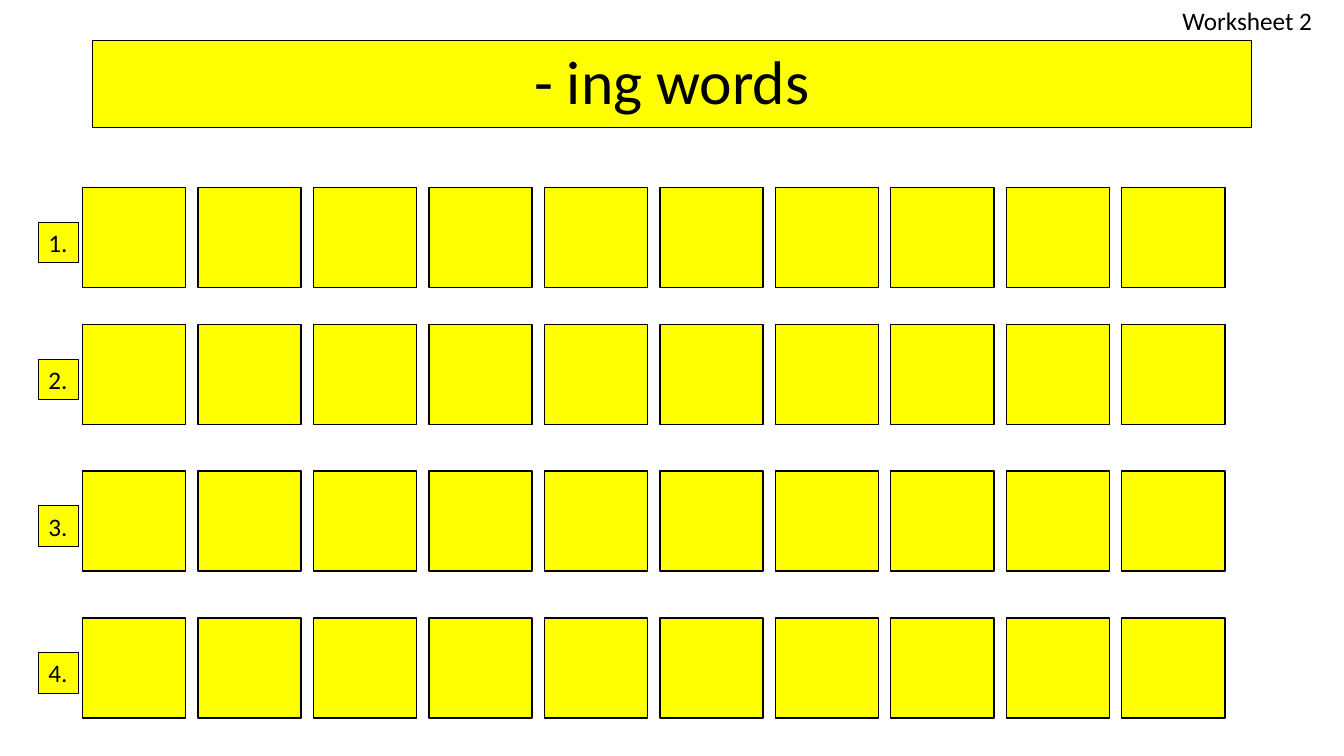
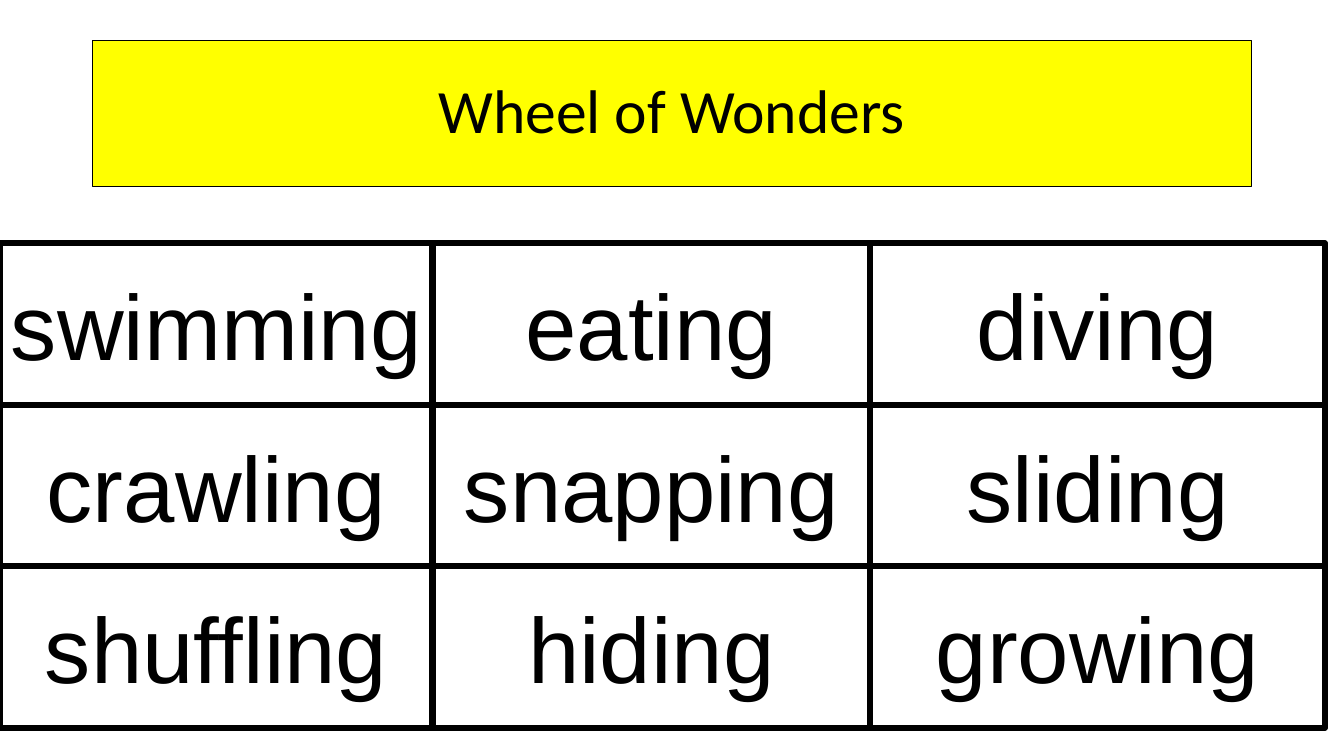
import itertools

import pptx
import pptx.dml.color
import pptx.enum.shapes
import pptx.enum.text
import pptx.util

Cm = pptx.util.Cm
Pt = pptx.util.Pt
ALIGN = pptx.enum.text.PP_ALIGN
ANCHOR = pptx.enum.text.MSO_ANCHOR

COLOURS = {"ink": "000000", "highlight": "FFFF00", "paper": "FFFFFF"}

# Text formats: attributes of the frame, the paragraph and the font
TITLE = {
    "frame": {"vertical_anchor": ANCHOR.MIDDLE, "word_wrap": True},
    "para": {"alignment": ALIGN.CENTER, "line_spacing": 0.9},
    "font": {"name": "Calibri", "size": Pt(44)},
}
LABEL = {
    "frame": {"vertical_anchor": ANCHOR.TOP, "word_wrap": False},
    "para": {"alignment": ALIGN.LEFT},
    "font": {"name": "Calibri", "size": Pt(18)},
}
WORD = {
    "frame": {"vertical_anchor": ANCHOR.MIDDLE, "word_wrap": False},
    "para": {"alignment": ALIGN.CENTER},
    "font": {"name": "Arial", "size": Pt(66)},
}

# Letter boxes on the worksheet, in cm
ROW_TOPS = [4.72, 8.18, 11.87, 15.57]
LETTERS_PER_ROW = 10
LETTERS_LEFT, LETTER_PITCH = 2.08, 2.91
LETTER_WIDTH, LETTER_HEIGHT = 2.6, 2.52

# Word grid, in cm
WORDS = [
    ["swimming", "eating", "diving"],
    ["crawling", "snapping", "sliding"],
    ["shuffling", "hiding", "growing"],
]
COLUMN_WIDTHS = [10.9, 11.03, 11.46]
GRID_TOP, GRID_ROW_HEIGHT = 6.13, 4.07


def colour(name):
    return pptx.dml.color.RGBColor.from_string(COLOURS[name])


def apply(target, values):
    for attribute, value in values.items():
        setattr(target, attribute, value)


def write(box, text, style):
    frame = box.text_frame
    apply(frame, style["frame"])
    para = frame.paragraphs[0]
    apply(para, style["para"])
    span = para.add_run()
    span.text = text
    apply(span.font, style["font"])
    span.font.color.rgb = colour("ink")


def add_box(page, place, fill="highlight", line=0.75, text=None, style=None):
    box = page.shapes.add_shape(
        pptx.enum.shapes.MSO_SHAPE.RECTANGLE, *map(Cm, place))
    box.shadow.inherit = False
    box.fill.solid()
    box.fill.fore_color.rgb = colour(fill)
    box.line.color.rgb = colour("ink")
    box.line.width = Pt(line)
    if text:
        write(box, text, style)


def add_page(deck, title, title_height):
    page = deck.slides.add_slide(deck.slide_layouts[6])
    add_box(page, (2.33, 1.02, 29.21, title_height), text=title, style=TITLE)
    return page


def add_letter_row(page, number, top):
    for column in range(LETTERS_PER_ROW):
        left = LETTERS_LEFT + column * LETTER_PITCH
        add_box(page, (left, top, LETTER_WIDTH, LETTER_HEIGHT), line=1)
    add_box(page, (0.97, top + 0.88, 1, 1.02), text=f"{number}.", style=LABEL)


def add_word_grid(page):
    lefts = list(itertools.accumulate(COLUMN_WIDTHS, initial=0))
    for row, words in enumerate(WORDS):
        top = GRID_TOP + row * GRID_ROW_HEIGHT
        for left, width, word in zip(lefts, COLUMN_WIDTHS, words):
            add_box(page, (left, top, width, GRID_ROW_HEIGHT),
                    fill="paper", line=4.5, text=word, style=WORD)


def main():
    deck = pptx.Presentation()
    apply(deck, {"slide_width": Cm(33.87), "slide_height": Cm(19.05)})

    # Worksheet with empty letter boxes
    page = add_page(deck, "- ing words", 2.2)
    for number, top in enumerate(ROW_TOPS, start=1):
        add_letter_row(page, number, top)
    tag = page.shapes.add_textbox(Cm(29.55), Cm(0), Cm(4.3), Cm(1.02))
    write(tag, "Worksheet 2", LABEL)

    # Words to guess
    page = add_page(deck, "Wheel of Wonders", 3.68)
    add_word_grid(page)

    deck.save("out.pptx")


if __name__ == "__main__":
    main()
